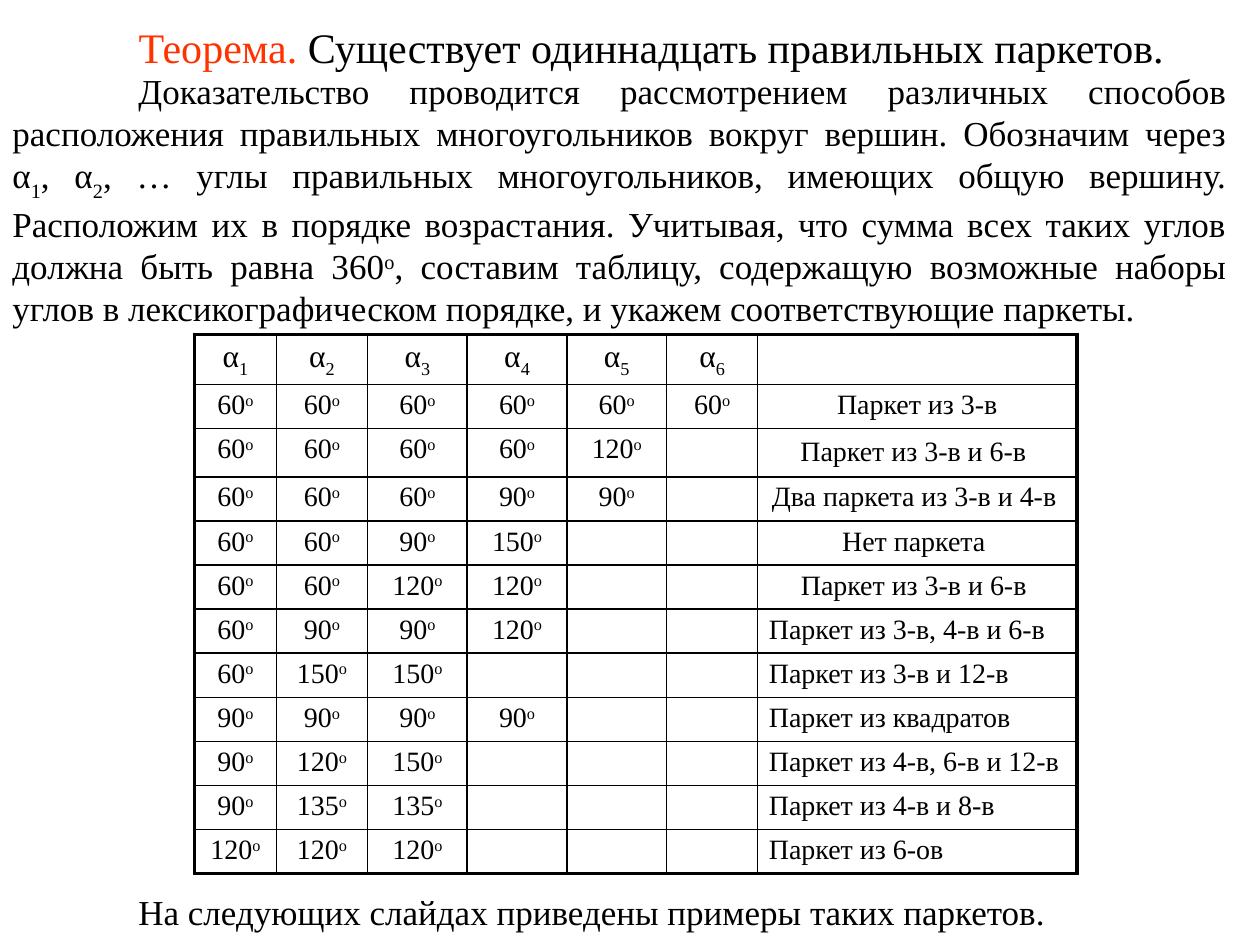
from dataclasses import dataclass

from lxml import etree
from pptx import Presentation
from pptx import util as u
from pptx.dml import color as dml
from pptx.enum import text
from pptx.oxml import ns

Pt = u.Pt
ALIGN = text.PP_ALIGN


@dataclass(frozen=True)
class Theme:
    font: str = "Times New Roman"
    ink: str = "000000"
    accent: str = "FF3300"
    heading: float = 24
    body: float = 20
    header: float = 18
    cell: float = 16
    small: float = 14
    thin: float = 1
    thick: float = 2.25
    first_line: float = 72


THEME = Theme()


def add_run(p, content, size=THEME.body, color=THEME.ink, base=0):
    r = p.add_run()
    r.text = content
    r.font.name = THEME.font
    r.font.size = Pt(size)
    r.font.bold = False
    r.font.color.rgb = dml.RGBColor.from_string(color)
    if base:
        r._r.get_or_add_rPr().set("baseline", str(base * 1000))


def format_paragraph(p, align, before, indent=0):
    p.alignment = align
    pPr = p._p.get_or_add_pPr()
    pPr.set("marL", "0")
    pPr.set("indent", str(Pt(indent)))
    spacing = etree.SubElement(pPr, ns.qn("a:spcBef"))
    etree.SubElement(spacing, ns.qn("a:spcPct")).set("val", str(before * 1000))


class SlideBuilder:
    def __init__(self, prs, theme):
        self.theme = theme
        self.slide = prs.slides.add_slide(prs.slide_layouts[5])

    def fill_frame(self, tf, runs):
        tf.word_wrap = True
        tf.vertical_anchor = text.MSO_ANCHOR.TOP
        p = tf.paragraphs[0]
        format_paragraph(p, ALIGN.JUSTIFY, 50, self.theme.first_line)
        for content, style in runs:
            add_run(p, content, **style)

    def title(self, left, top, width, height, runs):
        sp = self.slide.shapes.title
        sp.left, sp.top, sp.width, sp.height = map(Pt, (left, top, width, height))
        tf = sp.text_frame
        tf.auto_size = text.MSO_AUTO_SIZE.NONE
        tf.margin_top = Pt(10.5)
        self.fill_frame(tf, runs)

    def paragraph(self, left, top, width, height, runs):
        sp = self.slide.shapes.add_textbox(*map(Pt, (left, top, width, height)))
        sp.text_frame.auto_size = text.MSO_AUTO_SIZE.SHAPE_TO_FIT_TEXT
        self.fill_frame(sp.text_frame, runs)

    def border(self, cell, edges):
        tcPr = cell._tc.get_or_add_tcPr()
        for i, (side, outer) in enumerate(edges.items()):
            ln = etree.Element(ns.qn(f"a:ln{side}"))
            width = self.theme.thick if outer else self.theme.thin
            ln.set("w", str(Pt(width)))
            fill = etree.SubElement(ln, ns.qn("a:solidFill"))
            etree.SubElement(fill, ns.qn("a:srgbClr")).set("val", self.theme.ink)
            tcPr.insert(i, ln)

    def cell(self, cell, runs, align):
        cell.margin_left = cell.margin_right = Pt(6.5)
        cell.margin_top = cell.margin_bottom = Pt(3)
        cell.fill.background()
        p = cell.text_frame.paragraphs[0]
        format_paragraph(p, align, 20)
        for content, style in runs:
            add_run(p, content, **style)
        if not runs:
            end = etree.SubElement(p._p, ns.qn("a:endParaRPr"))
            end.set("sz", str(self.theme.small * 100))

    def table(self, left, top, widths, heights, rows):
        last_row, last_col = len(heights) - 1, len(widths) - 1
        frame = self.slide.shapes.add_table(
            len(heights), len(widths),
            *map(Pt, (left, top, sum(widths), sum(heights))))
        table = frame.table
        table.first_row = table.horz_banding = False
        for column, width in zip(table.columns, widths):
            column.width = Pt(width)
        for row, height in zip(table.rows, heights):
            row.height = Pt(height)
        for i, row in enumerate(rows):
            for j, (runs, align) in enumerate(row):
                cell = table.cell(i, j)
                self.cell(cell, runs, align)
                self.border(cell, {"L": j == 0, "R": j == last_col,
                                   "T": i == 0, "B": i == last_row})


ANGLE_COLUMNS = 6
PARQUETS = [
    ([60] * 6, "Паркет из 3-в", None, ALIGN.CENTER),
    ([60, 60, 60, 60, 120], "Паркет из 3-в и 6-в", THEME.header, ALIGN.CENTER),
    ([60, 60, 60, 90, 90], "Два паркета из 3-в и 4-в", THEME.small, ALIGN.CENTER),
    ([60, 60, 90, 150], "Нет паркета", THEME.cell, ALIGN.CENTER),
    ([60, 60, 120, 120], "Паркет из 3-в и 6-в", THEME.cell, ALIGN.CENTER),
    ([60, 90, 90, 120], "Паркет из 3-в, 4-в и 6-в", None, ALIGN.LEFT),
    ([60, 150, 150], "Паркет из 3-в и 12-в", None, ALIGN.LEFT),
    ([90, 90, 90, 90], "Паркет из квадратов", None, ALIGN.LEFT),
    ([90, 120, 150], "Паркет из 4-в, 6-в и 12-в", None, ALIGN.LEFT),
    ([90, 135, 135], "Паркет из 4-в и 8-в", None, ALIGN.LEFT),
    ([120, 120, 120], "Паркет из 6-ов", None, ALIGN.LEFT),
]
PROOF = [
    ("Доказательство проводится рассмотрением различных способов расположения "
     "правильных многоугольников вокруг вершин. Обозначим через α", {}),
    ("1", {"base": -30}),
    (", α", {}),
    ("2", {"base": -30}),
    (", … углы правильных многоугольников, имеющих общую вершину. Расположим их "
     "в порядке возрастания. Учитывая, что сумма всех таких углов должна быть "
     "равна 360", {}),
    ("о", {"base": 30}),
    (", составим таблицу, содержащую возможные наборы углов в лексикографическом "
     "порядке, и укажем соответствующие паркеты.", {}),
]


def header_row():
    style = {"size": THEME.header}
    row = [([("α", style), (str(n), {**style, "base": -25})], ALIGN.CENTER)
           for n in range(1, ANGLE_COLUMNS + 1)]
    return row + [([], ALIGN.CENTER)]


def parquet_row(angles, label, space_size, align):
    style = {"size": THEME.cell}
    row = [([(str(a), style), ("о", {**style, "base": 30})], ALIGN.CENTER)
           for a in angles]
    row += [([], ALIGN.CENTER)] * (ANGLE_COLUMNS - len(angles))
    runs = [(label, style)]
    if space_size:
        runs.append((" ", {"size": space_size}))
    return row + [(runs, align)]


def main():
    prs = Presentation()
    prs.slide_width, prs.slide_height = Pt(720), Pt(540)
    builder = SlideBuilder(prs, THEME)
    builder.title(0, 2, 720, 46, [
        ("Теорема. ", {"size": THEME.heading, "color": THEME.accent}),
        ("Существует одиннадцать правильных паркетов.", {"size": THEME.heading}),
    ])
    builder.table(
        111, 191,
        [47, 52, 57, 57, 57, 52, 182.5],
        [27.5, 25.2, 27.5] + [25.2] * 9,
        [header_row()] + [parquet_row(*parquet) for parquet in PARQUETS])
    builder.paragraph(0, 36, 708, 152.5, PROOF)
    builder.paragraph(0, 505.5, 720, 31.5, [
        ("На следующих слайдах приведены примеры таких паркетов.", {})])
    prs.save("out.pptx")


if __name__ == "__main__":
    main()
